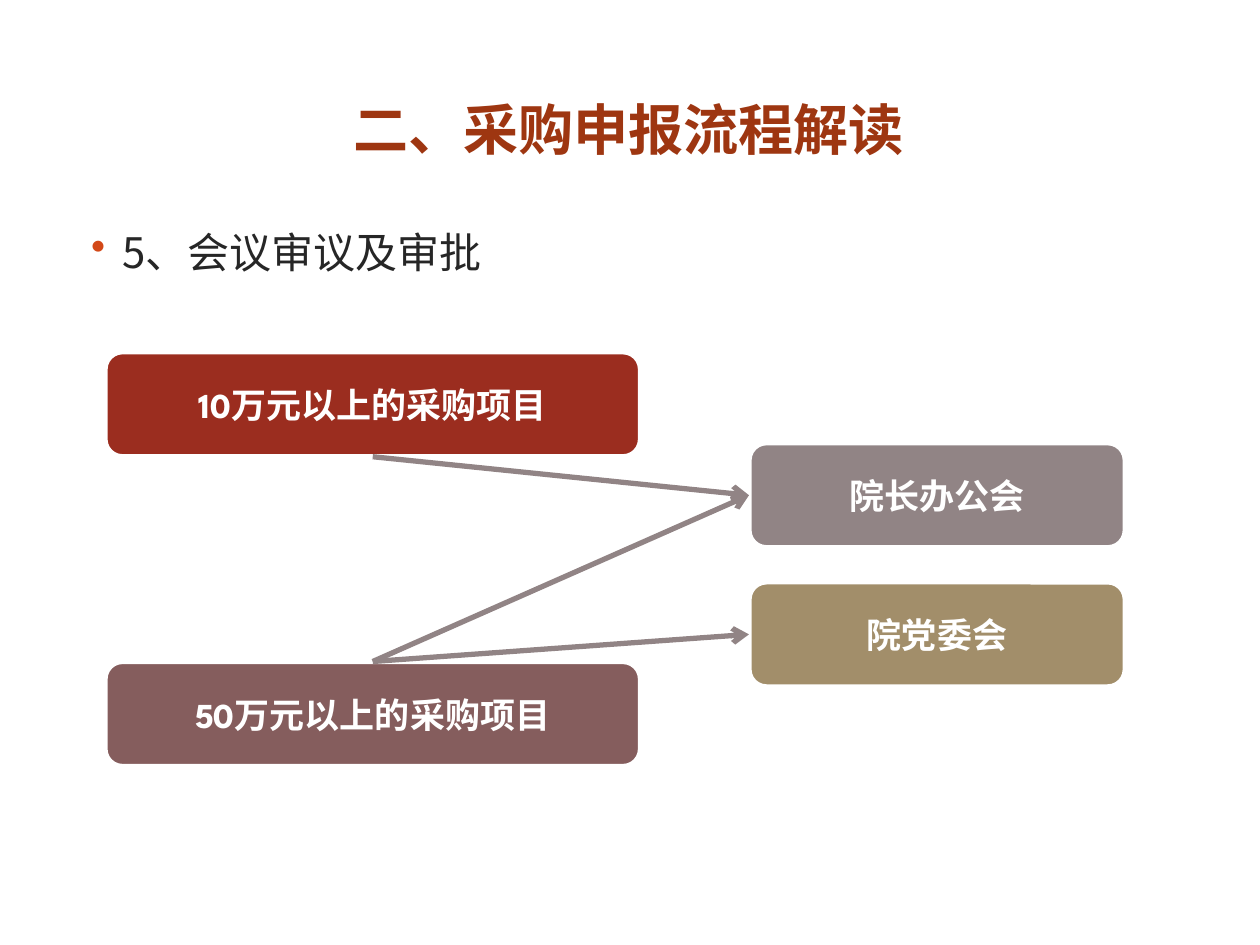
import pptx
import pptx.dml.color
import pptx.enum.shapes
import pptx.enum.text
import pptx.oxml.ns
import pptx.util
from lxml import etree

Pt = pptx.util.Pt
RGBColor = pptx.dml.color.RGBColor
PP_ALIGN = pptx.enum.text.PP_ALIGN
ANCHOR = pptx.enum.text.MSO_ANCHOR
qn = pptx.oxml.ns.qn

WHITE = RGBColor(0xFF, 0xFF, 0xFF)
INK = RGBColor(0x26, 0x26, 0x26)
RUST = RGBColor(0x9E, 0x36, 0x11)
ORANGE = RGBColor(0xD3, 0x48, 0x17)
RED = RGBColor(0x9B, 0x2D, 0x1F)
MAUVE = RGBColor(0x85, 0x5D, 0x5D)
GREY = RGBColor(0x91, 0x84, 0x85)
TAN = RGBColor(0xA2, 0x8E, 0x6A)

TOP, LEFT, BOTTOM = 0, 1, 2


class FlowSlide:
    cjk_font = "Noto Sans CJK SC"
    box_font = "League Spartan"
    line_width = 3
    box_height = 60

    def __init__(self, slide):
        self.slide = slide

    def set_text(self, frame, text, align, font, size, color, bold=False, anchor=ANCHOR.MIDDLE):
        frame_format = {
            "word_wrap": True,
            "auto_size": pptx.enum.text.MSO_AUTO_SIZE.NONE,
            "vertical_anchor": anchor,
        }
        for name, value in frame_format.items():
            setattr(frame, name, value)
        paragraph = frame.paragraphs[0]
        paragraph.alignment = align
        run = paragraph.add_run()
        run.text = text
        for name, value in {"name": font, "size": Pt(size), "bold": bold}.items():
            setattr(run.font, name, value)
        run.font.color.rgb = color
        # East Asian characters take their font from a:ea
        east_asian = etree.Element(qn("a:ea"), typeface=self.cjk_font)
        run.font._element.find(qn("a:latin")).addnext(east_asian)
        return paragraph

    def place_title(self, text, left, top, width, height):
        heading = self.slide.shapes.title
        place = {"left": left, "top": top, "width": width, "height": height}
        for name, value in place.items():
            setattr(heading, name, Pt(value))
        self.set_text(heading.text_frame, text, PP_ALIGN.CENTER, self.cjk_font, 31.5, RUST,
                      bold=True)

    def add_bullet(self, text, left, top, width, height):
        body = self.slide.shapes.add_textbox(Pt(left), Pt(top), Pt(width), Pt(height))
        paragraph = self.set_text(body.text_frame, text, PP_ALIGN.LEFT, self.cjk_font, 24, INK,
                                  anchor=ANCHOR.TOP)
        properties = paragraph._p.get_or_add_pPr()
        properties.set("marL", str(Pt(27)))
        properties.set("indent", str(-Pt(18)))
        bullet_color = etree.SubElement(properties, qn("a:buClr"))
        etree.SubElement(bullet_color, qn("a:srgbClr"), val=str(ORANGE))
        etree.SubElement(properties, qn("a:buChar"), char="•")

    def add_box(self, text, left, top, width, color):
        box = self.slide.shapes.add_shape(
            pptx.enum.shapes.MSO_SHAPE.ROUNDED_RECTANGLE,
            Pt(left), Pt(top), Pt(width), Pt(self.box_height))
        box.shadow.inherit = False
        box.fill.solid()
        box.fill.fore_color.rgb = color
        box.line.color.rgb = WHITE
        box.line.width = Pt(self.line_width)
        self.set_text(box.text_frame, text, PP_ALIGN.CENTER, self.box_font, 20, WHITE, bold=True)
        return box

    def add_arrow(self, source, source_side, target, target_side):
        arrow = self.slide.shapes.add_connector(
            pptx.enum.shapes.MSO_CONNECTOR.STRAIGHT, 0, 0, 0, 0)
        arrow.begin_connect(source, source_side)
        arrow.end_connect(target, target_side)
        arrow.line.color.rgb = GREY
        arrow.line.width = Pt(self.line_width)
        etree.SubElement(arrow.line._get_or_add_ln(), qn("a:tailEnd"), type="arrow")
        etree.SubElement(arrow._element.spPr, qn("a:effectLst"))


def main():
    deck = pptx.Presentation()
    deck.slide_width, deck.slide_height = Pt(720), Pt(540)
    flow = FlowSlide(deck.slides.add_slide(deck.slide_layouts[5]))

    # Heading and topic
    flow.place_title("二、采购申报流程解读", 34, 32.5, 650, 82)
    flow.add_bullet("5、会议审议及审批", 36, 126, 648, 405)

    # Projects by amount on the left, deciding meetings on the right
    over_100k = flow.add_box("10万元以上的采购项目", 60, 201, 306, RED)
    over_500k = flow.add_box("50万元以上的采购项目", 60, 378, 306, MAUVE)
    office_meeting = flow.add_box("院长办公会", 428, 253, 215, GREY)
    party_committee = flow.add_box("院党委会", 428, 332.5, 215, TAN)

    # Which project goes to which meeting
    for project, side, meeting in (
        (over_100k, BOTTOM, office_meeting),
        (over_500k, TOP, office_meeting),
        (over_500k, TOP, party_committee),
    ):
        flow.add_arrow(project, side, meeting, LEFT)

    deck.save("out.pptx")


if __name__ == "__main__":
    main()
